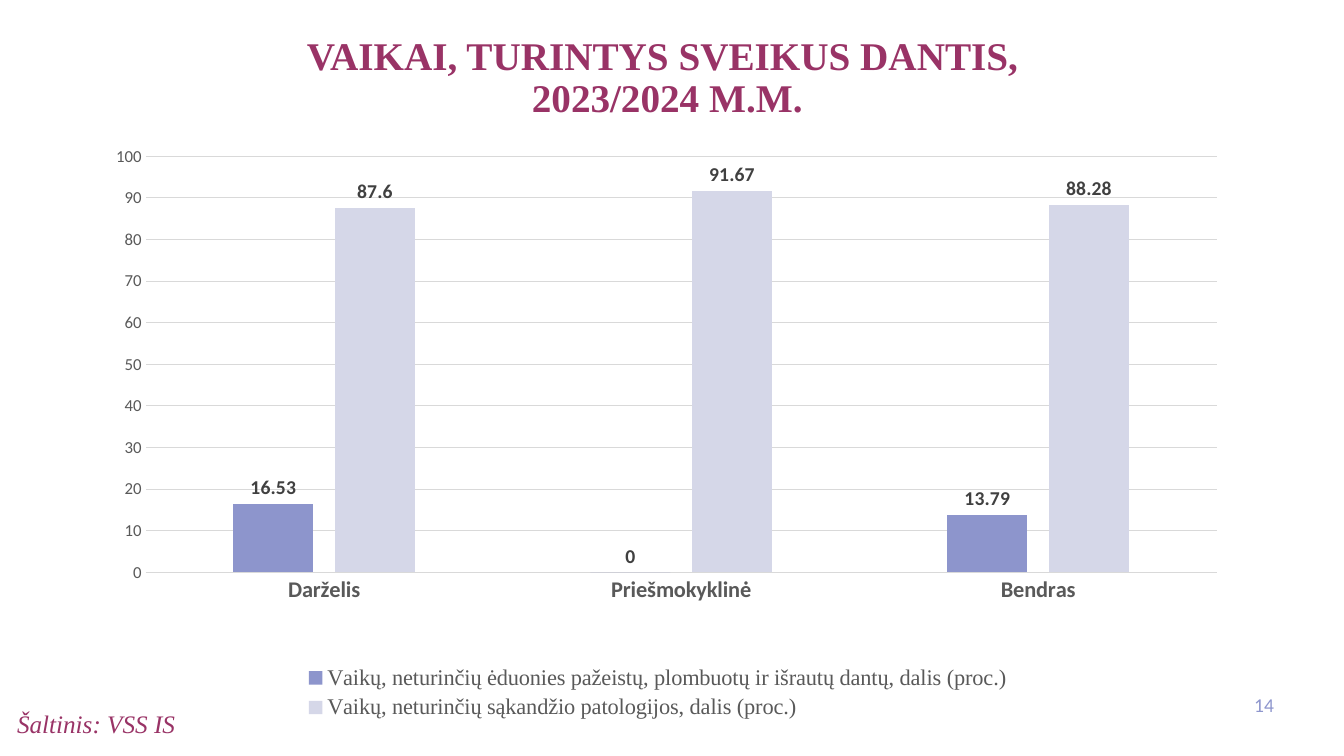
import pptx
import pptx.util
import pptx.dml.color
import pptx.chart.data
import pptx.enum.chart
import pptx.enum.text
import pptx.oxml

Cm = pptx.util.Cm
Pt = pptx.util.Pt
RGBColor = pptx.dml.color.RGBColor
Align = pptx.enum.text.PP_ALIGN
Anchor = pptx.enum.text.MSO_ANCHOR
enum = pptx.enum.chart

PLUM = RGBColor(0x99, 0x33, 0x66)
BLUE = RGBColor(0x8D, 0x95, 0xCC)
PALE = RGBColor(0xD5, 0xD7, 0xE8)
PAGE = RGBColor(0x8E, 0x96, 0xCD)
GRID = RGBColor(0xD9, 0xD9, 0xD9)
GREY = RGBColor(0x59, 0x59, 0x59)
DARK = RGBColor(0x40, 0x40, 0x40)
SERIF = "Times New Roman"
SANS = "Calibri"


def style(font, face, size, color, bold=False, italic=False):
    font.name = face
    font.size = Pt(size)
    font.color.rgb = color
    font.bold = bold
    font.italic = italic


def label(box, lines, look, align=Align.LEFT, anchor=Anchor.TOP):
    frame = slide.shapes.add_textbox(*[Cm(side) for side in box]).text_frame
    frame.word_wrap = True
    frame.vertical_anchor = anchor
    para = frame.paragraphs[0]
    para.alignment = align
    for index, line in enumerate(lines):
        if index:
            para.add_line_break()
        run = para.add_run()
        run.text = line
        style(run.font, *look)
    return para


deck = pptx.Presentation()
deck.slide_width = Cm(33.87)
deck.slide_height = Cm(19.05)
slide = deck.slides.add_slide(deck.slide_layouts[6])

title = label((-0.23, 0.79, 34.09, 3.02),
              ["VAIKAI, TURINTYS SVEIKUS DANTIS, ", "2023/2024 M.M."],
              (SERIF, 28, PLUM, True), Align.CENTER)
title.line_spacing = 0.9

data = pptx.chart.data.CategoryChartData()
data.categories = ["Darželis", "Priešmokyklinė", "Bendras"]
data.add_series("Vaikų, neturinčių ėduonies pažeistų, plombuotų ir išrautų dantų, dalis (proc.)",
                (16.53, 0, 13.79))
data.add_series("Vaikų, neturinčių sąkandžio patologijos, dalis (proc.)",
                (87.6, 91.67, 88.28))
chart = slide.shapes.add_chart(enum.XL_CHART_TYPE.COLUMN_CLUSTERED, Cm(2.11), Cm(3.45),
                               Cm(28.93), Cm(14.81), data).chart
chart.has_title = False
style(chart.font, SANS, 10, GREY)

chart.has_legend = True
chart.legend.position = enum.XL_LEGEND_POSITION.BOTTOM
chart.legend.include_in_layout = False
style(chart.legend.font, SERIF, 16, GREY)

plot = chart.plots[0]
plot.gap_width = 219
plot.overlap = -27
plot.vary_by_categories = False
for series, color in zip(plot.series, (BLUE, PALE)):
    series.format.fill.solid()
    series.format.fill.fore_color.rgb = color
    series.invert_if_negative = False
    tags = series.data_labels
    tags.show_value = True
    tags.position = enum.XL_LABEL_POSITION.OUTSIDE_END
    style(tags.font, SANS, 14, DARK, True)

cats = chart.category_axis
vals = chart.value_axis
for axis in (cats, vals):
    axis.major_tick_mark = enum.XL_TICK_MARK.NONE
    axis.minor_tick_mark = enum.XL_TICK_MARK.NONE
style(cats.tick_labels.font, SANS, 16, GREY, True)
style(vals.tick_labels.font, SANS, 12, GREY)
vals.minimum_scale = 0
vals.maximum_scale = 100
vals.major_unit = 10
vals.has_major_gridlines = True
vals.format.line.fill.background()
for line in (cats.format.line, vals.major_gridlines.format.line):
    line.color.rgb = GRID
    line.width = Pt(0.75)

area = chart.element.chart.plotArea
for old in area.findall(pptx.oxml.ns.qn("c:layout")):
    area.remove(old)
parts = [("layoutTarget", "inner"), ("xMode", "edge"), ("yMode", "edge"),
         ("x", 0.054), ("y", 0.033), ("w", 0.933), ("h", 0.708)]
marks = "".join(f'<c:{name} val="{value}"/>' for name, value in parts)
area.insert(0, pptx.oxml.parse_xml(
    f'<c:layout {pptx.oxml.ns.nsdecls("c")}><c:manualLayout>{marks}</c:manualLayout></c:layout>'))

label((0.18, 17.73, 16, 0.97), ["Šaltinis: VSS IS"], (SERIF, 18, PLUM, False, True))
label((31.04, 17.25, 1.32, 1.02), ["14"], (SANS, 14, PAGE), Align.RIGHT, Anchor.MIDDLE)

deck.save("out.pptx")
